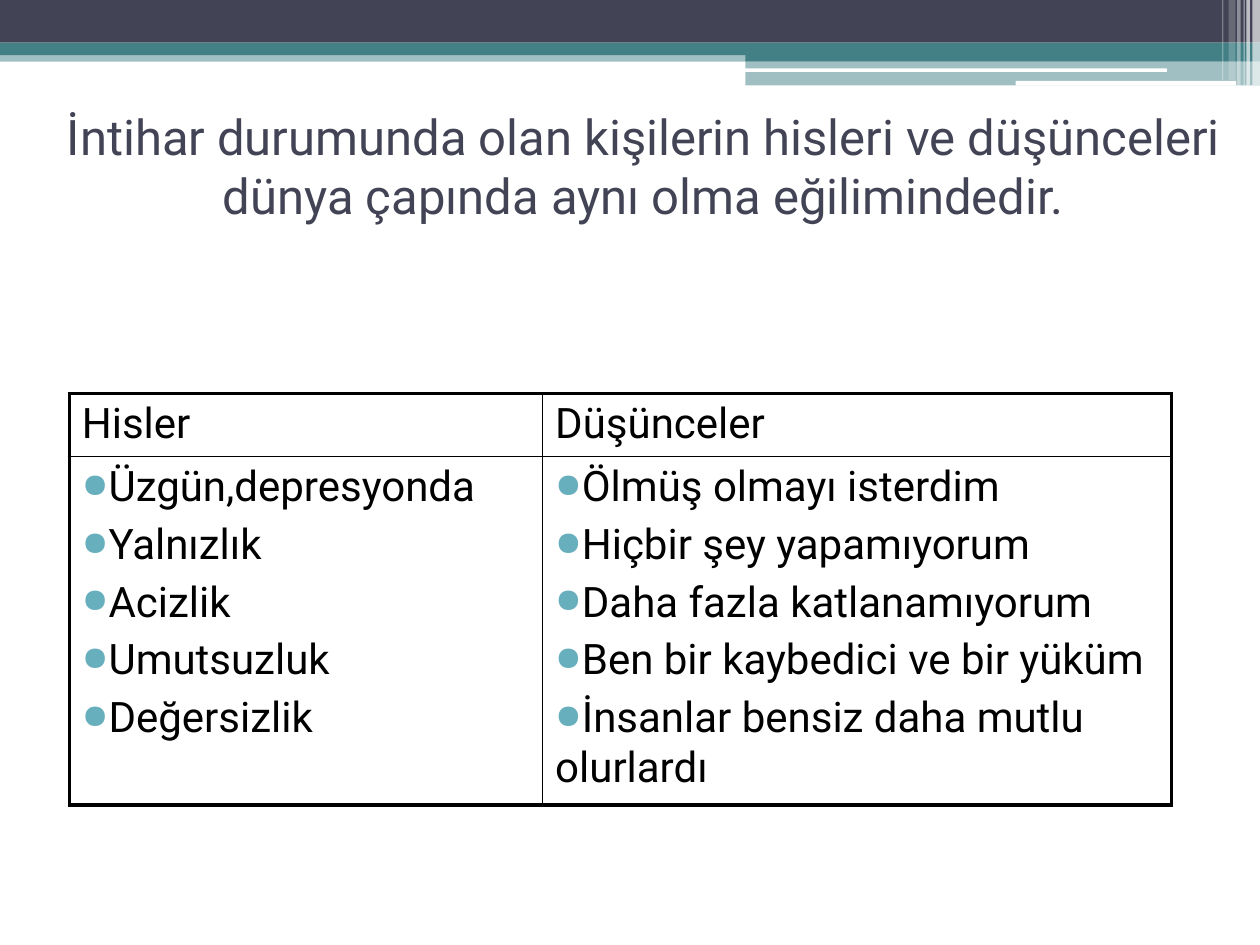
from lxml.etree import SubElement
from pptx import Presentation
from pptx.dml.color import RGBColor
from pptx.enum.shapes import MSO_SHAPE
from pptx.enum.text import MSO_ANCHOR, PP_ALIGN
from pptx.oxml import parse_xml
from pptx.oxml.ns import nsdecls, qn
from pptx.util import Pt

COLORS = {"navy": "424456", "teal": "438086", "white": "FFFFFF",
          "black": "000000", "bullet": "67AFBD"}
FONT = "Roboto"
OUTER, INNER = 2.25, 1


def style_run(run, size, color):
    for name, value in {"name": FONT, "size": Pt(size)}.items():
        setattr(run.font, name, value)
    run.font.color.rgb = RGBColor.from_string(COLORS[color])


def add_border(cell, side, width, position):
    """Put one solid edge line at its schema position in the cell."""
    line = parse_xml(
        f'<a:{side} {nsdecls("a")} w="{Pt(width)}"><a:solidFill>'
        f'<a:srgbClr val="{COLORS["black"]}"/></a:solidFill></a:{side}>')
    cell.fill.background()
    cell._tc.get_or_add_tcPr().insert(position, line)


prs = Presentation()
prs.slide_width, prs.slide_height = Pt(720), Pt(540)
slide = prs.slides.add_slide(prs.slide_layouts[6])

# Header bands and stripes: left, top, width, height, colour, opacity %, rounded
header = [
    (0, 28.6, 720, 6.6, "teal", 50, False),
    (0, 0, 720, 24.4, "navy", 100, False),
    (0, 24.4, 720, 7.2, "teal", 100, False),
    (426, 28.2, 294, 6.8, "teal", 100, False),
    (426, 34.6, 294, 14.2, "teal", 50, False),
    (425.8, 39.1, 241, 2, "white", 100, True),
    (580.4, 46.2, 126, 2.7, "white", 100, True),
    (715.6, 0, 4.4, 48.8, "white", 65, False),
    (712.2, 0, 2, 48.8, "white", 65, False),
    (710.6, 0, 0.7, 48.8, "white", 60, False),
    (707, 0, 2, 48.8, "white", 40, False),
    (702, 0, 4, 46, "white", 20, False),
    (698.4, 0, 0.7, 46, "white", 30, False),
]
for left, top, width, height, color, opacity, rounded in header:
    preset = MSO_SHAPE.ROUNDED_RECTANGLE if rounded else MSO_SHAPE.RECTANGLE
    band = slide.shapes.add_shape(preset, Pt(left), Pt(top), Pt(width), Pt(height))
    band.shadow.inherit = False
    band.line.fill.background()
    band.fill.solid()
    band.fill.fore_color.rgb = RGBColor.from_string(COLORS[color])
    if opacity < 100:
        rgb = band.fill._xPr.find(".//" + qn("a:srgbClr"))
        SubElement(rgb, qn("a:alpha"), val=str(opacity * 1000))

# Title
title = slide.shapes.add_textbox(Pt(22.3), Pt(50.4), Pt(697.7), Pt(88.6)).text_frame
title_format = {"word_wrap": True, "vertical_anchor": MSO_ANCHOR.MIDDLE,
                "margin_right": Pt(14.4)}
for name, value in title_format.items():
    setattr(title, name, value)
heading = title.paragraphs[0]
heading.alignment = PP_ALIGN.CENTER
title_lines = ["İntihar durumunda olan kişilerin hisleri ve düşünceleri",
               "dünya çapında aynı olma eğilimindedir."]
for number, text in enumerate(title_lines):
    if number:
        heading.add_line_break()
    run = heading.add_run()
    run.text = text
    style_run(run, 28, "navy")

# Feelings and thoughts
columns = {
    "Hisler": ["Üzgün,depresyonda", "Yalnızlık", "Acizlik", "Umutsuzluk",
               "Değersizlik"],
    "Düşünceler": ["Ölmüş olmayı isterdim", "Hiçbir şey yapamıyorum",
                   "Daha fazla katlanamıyorum", "Ben bir kaybedici ve bir yüküm",
                   "İnsanlar bensiz daha mutlu olurlardı"],
}
table = slide.shapes.add_table(2, 2, Pt(39.6), Pt(224.8), Pt(630), Pt(232)).table
table.first_row = table.horz_banding = False
for column, width in zip(table.columns, (270.5, 359.5)):
    column.width = Pt(width)
for row, height in zip(table.rows, (36, 196)):
    row.height = Pt(height)

for col, (label, items) in enumerate(columns.items()):
    for row, texts in enumerate(([label], items)):
        cell = table.cell(row, col)
        for number, text in enumerate(texts):
            frame = cell.text_frame
            paragraph = frame.add_paragraph() if number else frame.paragraphs[0]
            paragraph.space_before = Pt(4.8)
            run = paragraph.add_run()
            run.text = text
            style_run(run, 24, "black")
            if row == 1:
                properties = paragraph._p.get_or_add_pPr()
                bullet_color = SubElement(properties, qn("a:buClr"))
                SubElement(bullet_color, qn("a:srgbClr"), val=COLORS["bullet"])
                SubElement(properties, qn("a:buSzPct"), val="80000")
                SubElement(properties, qn("a:buChar"), char="●")
        on_edge = {"lnL": col == 0, "lnR": col == 1, "lnT": row == 0, "lnB": row == 1}
        for position, (side, outer) in enumerate(on_edge.items()):
            add_border(cell, side, OUTER if outer else INNER, position)

prs.save("out.pptx")
